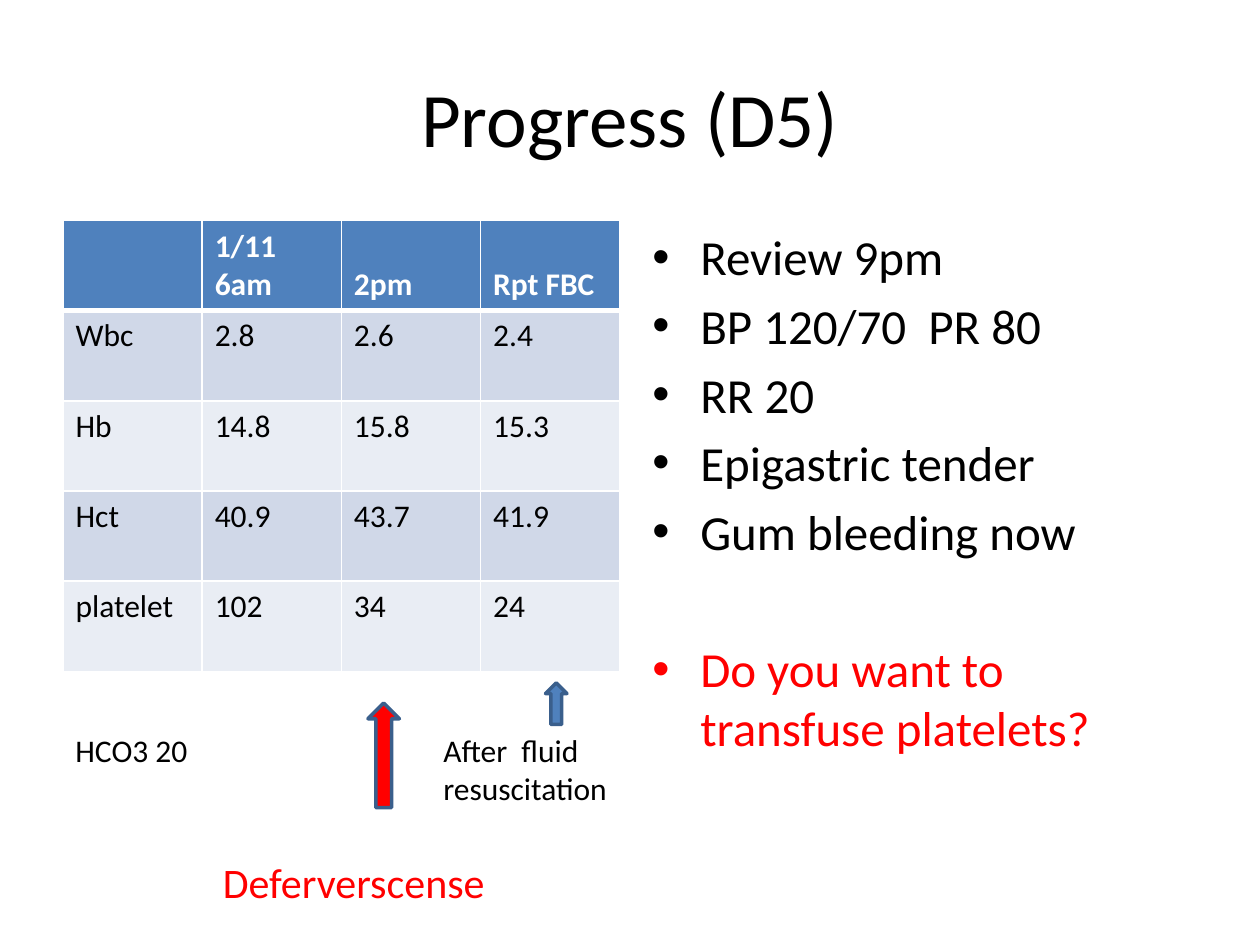
import pptx
import pptx.dml.color
import pptx.enum.shapes
import pptx.enum.text
import pptx.oxml
import pptx.oxml.ns
import pptx.util
from pptx.util import Inches

COLORS = {
    "black": "000000",
    "white": "FFFFFF",
    "red": "FF0000",
    "blue": "4F81BD",
    "outline": "3A5F8C",
    "band_dark": "D0D8E8",
    "band_light": "E9EDF4",
}
FONT = "Calibri"
ANCHOR = pptx.enum.text.MSO_ANCHOR

BLOOD_COUNTS = [
    ["", "1/11\n6am", "2pm", "Rpt FBC"],
    ["Wbc", "2.8", "2.6", "2.4"],
    ["Hb", "14.8", "15.8", "15.3"],
    ["Hct", "40.9", "43.7", "41.9"],
    ["platelet", "102", "34", "24"],
]
FINDINGS = ["Review 9pm", "BP 120/70  PR 80", "RR 20", "Epigastric tender", "Gum bleeding now"]
QUESTION = "Do you want to transfuse platelets?"


def rgb(name):
    return pptx.dml.color.RGBColor.from_string(COLORS[name])


def add_run(p, text, size, color="black", bold=False):
    r = p.add_run()
    r.text = text
    r.font.name = FONT
    r.font.size = pptx.util.Pt(size)
    r.font.bold = bold
    r.font.color.rgb = rgb(color)


def place(sp, left, top, width, height):
    sp.left, sp.top = Inches(left), Inches(top)
    sp.width, sp.height = Inches(width), Inches(height)


def set_title(s, text):
    sp = s.shapes.title
    place(sp, 0.5, 0.3, 9, 1.25)
    sp.text_frame.vertical_anchor = ANCHOR.MIDDLE
    p = sp.text_frame.paragraphs[0]
    p.alignment = pptx.enum.text.PP_ALIGN.CENTER
    add_run(p, text, 44)


def set_border(cell, side, width):
    tcPr = cell._tc.get_or_add_tcPr()
    tcPr.append(pptx.oxml.parse_xml(
        f'<a:ln{side} {pptx.oxml.ns.nsdecls("a")} w="{pptx.util.Pt(width)}">'
        f'<a:solidFill><a:srgbClr val="{COLORS["white"]}"/></a:solidFill></a:ln{side}>'))


def format_cell(cell, text, row):
    header = row == 0
    widths = {"L": 1, "R": 1, "T": 3 if row == 1 else 1, "B": 3 if header else 1}
    for side, width in widths.items():
        set_border(cell, side, width)
    cell.fill.solid()
    cell.fill.fore_color.rgb = rgb("blue" if header else "band_dark" if row % 2 else "band_light")
    cell.vertical_anchor = ANCHOR.BOTTOM if header else ANCHOR.TOP
    tf = cell.text_frame
    for i, line in enumerate(text.split("\n") if text else []):
        p = tf.add_paragraph() if i else tf.paragraphs[0]
        add_run(p, line, 18, "white" if header else "black", header)


def add_blood_table(s, rows):
    table = s.shapes.add_table(len(rows), len(rows[0]), Inches(0.5), Inches(1.75),
                               Inches(4.42), Inches(3.58)).table
    table.horz_banding = False
    for i, row in enumerate(rows):
        for j, text in enumerate(row):
            format_cell(table.cell(i, j), text, i)


def add_text_box(s, left, top, width, height):
    sp = s.shapes.add_textbox(Inches(left), Inches(top), Inches(width), Inches(height))
    sp.text_frame.word_wrap = True
    return sp.text_frame


def add_label(s, text, left, top, width, height, size=18, color="black"):
    tf = add_text_box(s, left, top, width, height)
    add_run(tf.paragraphs[0], text, size, color)


def add_bullet(p, text, color="black", space=5.6):
    p.space_before = pptx.util.Pt(space)
    pPr = p._p.get_or_add_pPr()
    pPr.set("marL", str(Inches(0.38)))
    pPr.set("indent", str(-Inches(0.38)))
    for xml in (f'<a:buFont {pptx.oxml.ns.nsdecls("a")} typeface="Arial"/>',
                f'<a:buChar {pptx.oxml.ns.nsdecls("a")} char="•"/>'):
        pPr.append(pptx.oxml.parse_xml(xml))
    add_run(p, text, 28, color)


def add_review(s):
    tf = add_text_box(s, 5.08, 1.75, 4.42, 4.95)
    for i, text in enumerate(FINDINGS):
        add_bullet(tf.add_paragraph() if i else tf.paragraphs[0], text)
    add_bullet(tf.add_paragraph(), QUESTION, "red", 45)


def add_up_arrow(s, left, top, width, height, color):
    sp = s.shapes.add_shape(pptx.enum.shapes.MSO_SHAPE.UP_ARROW, Inches(left), Inches(top),
                            Inches(width), Inches(height))
    sp.shadow.inherit = False
    sp.fill.solid()
    sp.fill.fore_color.rgb = rgb(color)
    sp.line.color.rgb = rgb("outline")
    sp.line.width = pptx.util.Pt(2)


def main():
    prs = pptx.Presentation()
    prs.slide_width, prs.slide_height = Inches(10), Inches(7.5)
    s = prs.slides.add_slide(prs.slide_layouts[5])
    set_title(s, "Progress (D5)")
    add_blood_table(s, BLOOD_COUNTS)
    add_review(s)
    add_label(s, "HCO3 20", 0.5, 5.75, 1.25, 0.42)
    add_label(s, "After  fluid resuscitation", 3.42, 5.75, 1.58, 0.71)
    add_up_arrow(s, 4.33, 5.42, 0.17, 0.33, "blue")
    add_label(s, "Deferverscense", 1.67, 6.75, 2.5, 0.5, 24, "red")
    add_up_arrow(s, 2.92, 5.58, 0.25, 0.83, "red")
    prs.save("out.pptx")


if __name__ == "__main__":
    main()
